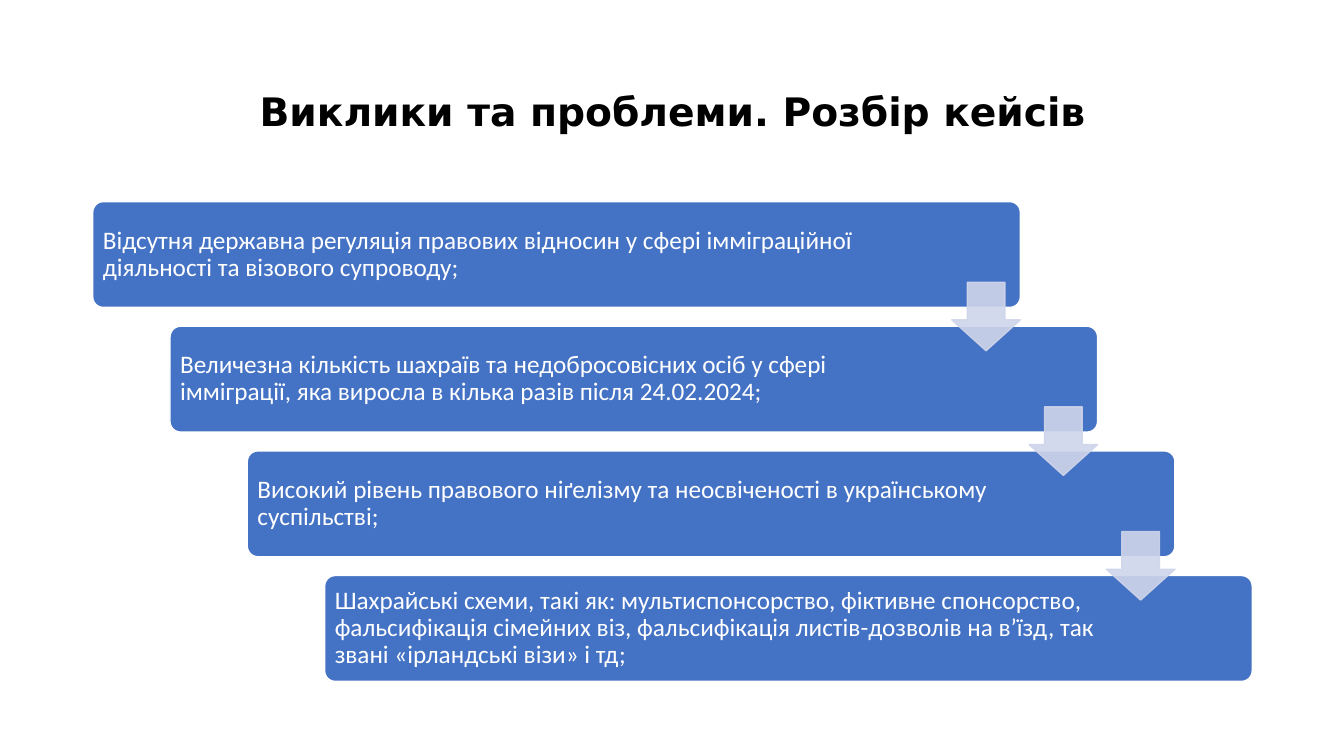
from dataclasses import dataclass

from lxml.etree import SubElement
from pptx import Presentation
from pptx.dml.color import RGBColor
from pptx.enum.shapes import MSO_SHAPE as Preset
from pptx.enum.text import MSO_ANCHOR as Anchor, PP_ALIGN as Align
from pptx.oxml.ns import qn
from pptx.util import Inches, Pt


@dataclass(frozen=True)
class Theme:
    card: str = "4472C4"
    arrow: str = "CFD5EA"
    white: str = "FFFFFF"
    black: str = "000000"
    title_font: str = "DejaVu Sans"
    body_font: str = "Calibri"
    title_size: int = 28
    body_size: int = 18
    arrow_opacity: int = 90


THEME = Theme()
TITLE = "Виклики та проблеми. Розбір кейсів"

# Each challenge with the width of its text area
CHALLENGES = [
    ("Відсутня державна регуляція правових відносин у сфері імміграційної "
     "діяльності та візового супроводу;", 7.98),
    ("Величезна кількість шахраїв та недобросовісних осіб у сфері імміграції, "
     "яка виросла в кілька разів після 24.02.2024;", 7.69),
    ("Високий рівень правового ніґелізму та неосвіченості в українському "
     "суспільстві;", 7.7),
    ("Шахрайські схеми, такі як: мультиспонсорство, фіктивне спонсорство, "
     "фальсифікація сімейних віз, фальсифікація листів-дозволів на вʼїзд, "
     "так звані «ірландські візи» і тд;", 7.69),
]

CARD_WIDTH, CARD_HEIGHT = 9.2, 1.05
TEXT_MARGIN = 0.03
ARROW_SIZE = 0.68
ARROW_DROP = 0.8


def add_text(slide, text, left, top, width, height, *, font, size, color,
             bold=False, align=Align.LEFT, inset_x=0.07, inset_y=0.07):
    box = slide.shapes.add_textbox(
        Inches(left), Inches(top), Inches(width), Inches(height))
    frame = box.text_frame
    frame.word_wrap = True
    frame.vertical_anchor = Anchor.MIDDLE
    frame.margin_left = frame.margin_right = Inches(inset_x)
    frame.margin_top = frame.margin_bottom = Inches(inset_y)
    paragraph = frame.paragraphs[0]
    paragraph.alignment = align
    paragraph.line_spacing = 0.9
    run = paragraph.add_run()
    run.text = text
    run.font.name = font
    run.font.size = Pt(size)
    run.font.bold = bold
    run.font.color.rgb = RGBColor.from_string(color)


def add_preset(slide, preset, left, top, width, height, *, fill, line,
               adjustments, opacity=100):
    shape = slide.shapes.add_shape(
        preset, Inches(left), Inches(top), Inches(width), Inches(height))
    shape.shadow.inherit = False
    shape.fill.solid()
    shape.fill.fore_color.rgb = RGBColor.from_string(fill)
    shape.line.color.rgb = RGBColor.from_string(line)
    shape.line.width = Pt(1)
    for index, value in enumerate(adjustments):
        shape.adjustments[index] = value
    if opacity < 100:
        for color in shape.element.spPr.iter(qn("a:srgbClr")):
            SubElement(color, qn("a:alpha"), val=str(opacity * 1000))


def add_title(slide, left, top, width, height):
    add_text(slide, TITLE, left, top, width, height, font=THEME.title_font,
             size=THEME.title_size, color=THEME.black, bold=True,
             align=Align.CENTER, inset_x=0.1, inset_y=0.05)


def add_staircase(slide, left, top, width, height):
    """Spread the cards diagonally over the box and link them with arrows."""
    gaps = len(CHALLENGES) - 1
    step_x = (width - CARD_WIDTH) / gaps
    step_y = (height - CARD_HEIGHT) / gaps
    corners = [(left + i * step_x, top + i * step_y)
               for i in range(len(CHALLENGES))]

    for (x, y), (text, text_width) in zip(corners, CHALLENGES):
        add_preset(slide, Preset.ROUNDED_RECTANGLE, x, y, CARD_WIDTH,
                   CARD_HEIGHT, fill=THEME.card, line=THEME.white,
                   adjustments=[0.1])
        add_text(slide, text, x + TEXT_MARGIN, y + TEXT_MARGIN, text_width,
                 CARD_HEIGHT - 2 * TEXT_MARGIN, font=THEME.body_font,
                 size=THEME.body_size, color=THEME.white)

    for x, y in corners[:-1]:
        add_preset(slide, Preset.DOWN_ARROW, x + CARD_WIDTH - ARROW_SIZE,
                   y + ARROW_DROP, ARROW_SIZE, ARROW_SIZE, fill=THEME.arrow,
                   line=THEME.arrow, adjustments=[0.55, 0.45],
                   opacity=THEME.arrow_opacity)


def main():
    presentation = Presentation()
    presentation.slide_width = Inches(13.33)
    presentation.slide_height = Inches(7.5)
    slide = presentation.slides.add_slide(presentation.slide_layouts[6])
    add_title(slide, 0.92, 0.4, 11.5, 1.45)
    add_staircase(slide, 0.92, 2, 11.5, 4.76)
    presentation.save("out.pptx")


if __name__ == "__main__":
    main()
